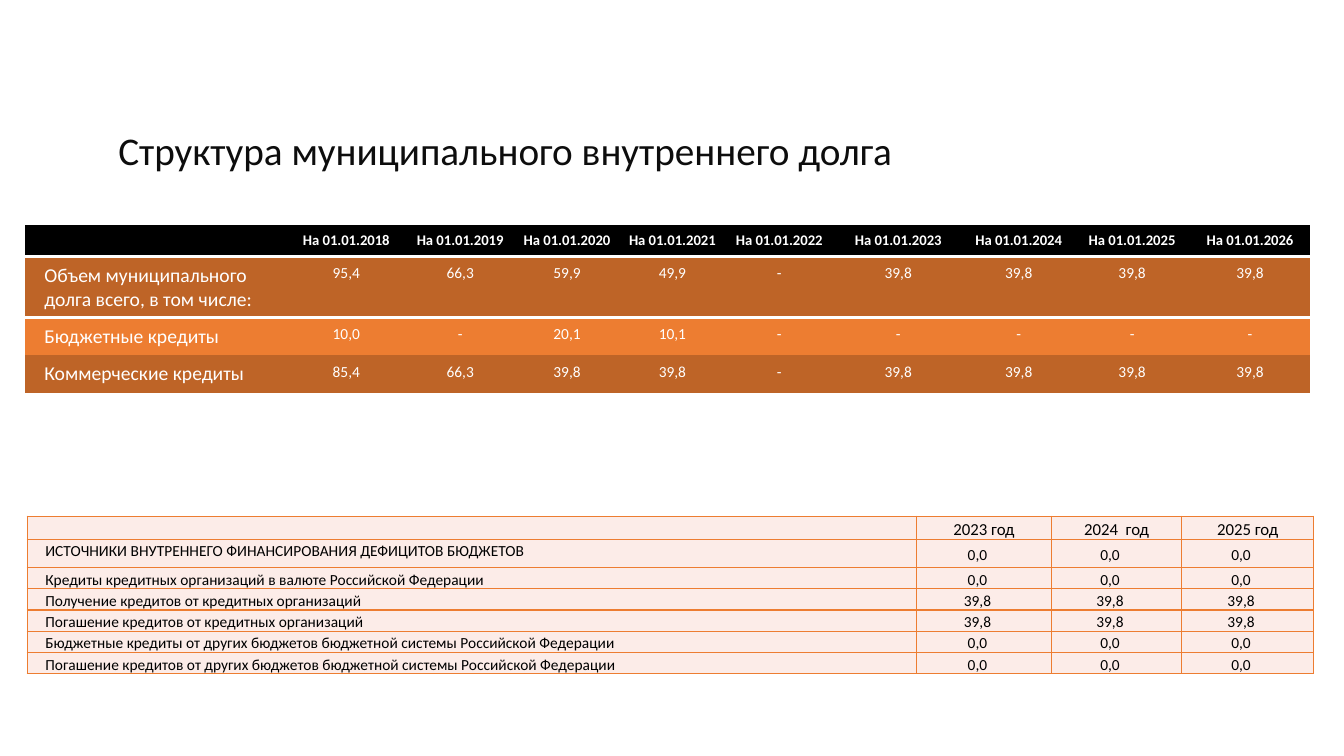
import pptx
import pptx.util
import pptx.dml.color
import pptx.enum.text
import pptx.oxml.ns
from lxml import etree

Inches, Pt = pptx.util.Inches, pptx.util.Pt
RGBColor = pptx.dml.color.RGBColor
ALIGN = pptx.enum.text.PP_ALIGN
ANCHOR = pptx.enum.text.MSO_ANCHOR
qn = pptx.oxml.ns.qn

# Content
TITLE = "Структура муниципального внутреннего долга"
DEBT = [
    [""] + [f"На 01.01.{year}" for year in range(2018, 2027)],
    ["Объем муниципального долга всего, в том числе:",
     "95,4", "66,3", "59,9", "49,9", "-", "39,8", "39,8", "39,8", "39,8"],
    ["Бюджетные кредиты",
     "10,0", "-", "20,1", "10,1", "-", "-", "-", "-", "-"],
    ["Коммерческие кредиты",
     "85,4", "66,3", "39,8", "39,8", "-", "39,8", "39,8", "39,8", "39,8"],
]
FUNDS = [
    ("", "2023 год", "2024  год", "2025 год"),
    ("ИСТОЧНИКИ ВНУТРЕННЕГО ФИНАНСИРОВАНИЯ ДЕФИЦИТОВ БЮДЖЕТОВ", "0,0", "0,0", "0,0"),
    ("Кредиты кредитных организаций в валюте Российской Федерации", "0,0", "0,0", "0,0"),
    ("Получение кредитов от кредитных организаций", "39,8", "39,8", "39,8"),
    ("Погашение кредитов от кредитных организаций", "39,8", "39,8", "39,8"),
    ("Бюджетные кредиты от других бюджетов бюджетной системы Российской Федерации",
     "0,0", "0,0", "0,0"),
    ("Погашение кредитов от других бюджетов бюджетной системы Российской Федерации",
     "0,0", "0,0", "0,0"),
]
DEBT_COLS = [2.6, 1.17, 1.09, 1.03, 1.06, 1.06, 1.3, 1.09, 1.16, 1.18]
DEBT_ROWS = [0.31, 0.6, 0.37, 0.37]
FUND_COLS = [8.82, 1.34, 1.29, 1.31]
FUND_ROWS = [0.23, 0.28] + [0.21] * 5

# Style
FONT = "Calibri"
PLAIN = "{2D5ABB26-0587-4C30-8999-92F81FD0307C}"
BLACK = RGBColor(0x00, 0x00, 0x00)
WHITE = RGBColor(0xFF, 0xFF, 0xFF)
INK = RGBColor(0x0D, 0x0D, 0x0D)
ORANGE = RGBColor(0xED, 0x7D, 0x31)
BROWN = RGBColor(0xBE, 0x64, 0x27)
PINK = RGBColor(0xFC, 0xEC, 0xE8)


def add_run(para, text, size, color, bold=False):
    run = para.add_run()
    run.text = text
    font = run.font
    font.name, font.size, font.bold = FONT, Pt(size), bold
    font.color.rgb = color


def add_grid(slide, left, top, cols, rows):
    frame = slide.shapes.add_table(
        len(rows), len(cols), Inches(left), Inches(top),
        Inches(sum(cols)), Inches(sum(rows)))
    table = frame.table
    table.first_row = table.horz_banding = False
    table._tbl.tblPr.find(qn("a:tableStyleId")).text = PLAIN
    for col, width in zip(table.columns, cols):
        col.width = Inches(width)
    for row, height in zip(table.rows, rows):
        row.height = Inches(height)
    return table


def set_edge(cell, sides, color, width):
    props = cell._tc.get_or_add_tcPr()
    for side in sides:
        line = etree.SubElement(props, qn(f"a:ln{side}"), w=str(Pt(width)))
        fill = etree.SubElement(line, qn("a:solidFill"))
        etree.SubElement(fill, qn("a:srgbClr"), val=str(color))


def fill_cell(cell, text, size, color, fill, pad, label, bold=False):
    cell.fill.solid()
    cell.fill.fore_color.rgb = fill
    cell.margin_left, cell.margin_top, cell.margin_right, cell.margin_bottom = map(Inches, pad)
    para = cell.text_frame.paragraphs[0]
    if label:
        para._p.get_or_add_pPr().set("marL", str(Inches(0.12)))
    else:
        para.alignment = ALIGN.CENTER
    if text:
        add_run(para, text, size, color, bold)
    else:
        etree.SubElement(para._p, qn("a:endParaRPr"), sz=str(size * 100))
    return para


deck = pptx.Presentation()
deck.slide_width, deck.slide_height = Inches(13.33), Inches(7.5)
slide = deck.slides.add_slide(deck.slide_layouts[6])

# Title
box = slide.shapes.add_textbox(Inches(0.13), Inches(1.2), Inches(9.76), Inches(0.45))
box.text_frame.word_wrap = True
para = box.text_frame.paragraphs[0]
para.alignment = ALIGN.CENTER
add_run(para, TITLE, 28, INK)

# Debt by date
table = add_grid(slide, 0.25, 2.23, DEBT_COLS, DEBT_ROWS)
for r, row in enumerate(DEBT):
    fill = BLACK if r == 0 else BROWN if r % 2 else ORANGE
    for c, text in enumerate(row):
        cell = table.cell(r, c)
        if r == 0:
            set_edge(cell, "B", WHITE, 2)
        elif r == 1:
            set_edge(cell, "T", WHITE, 2)
        size = 10.5 if r == 0 else 11 if c else 14
        if not text:
            size = 10
        fill_cell(cell, text, size, WHITE, fill, [0.07] * 4, c == 0, r == 0)

# Sources of deficit funding
table = add_grid(slide, 0.27, 5.12, FUND_COLS, FUND_ROWS)
for r, row in enumerate(FUNDS):
    for c, text in enumerate(row):
        cell = table.cell(r, c)
        set_edge(cell, "LRTB", ORANGE, 1)
        pad = (0.06, 0, 0.19 if r and c else 0.06, 0)
        para = fill_cell(cell, text, 11 if r else 12, BLACK, PINK, pad, c == 0)
        para.line_spacing = 1.15
        if c:
            cell.vertical_anchor = ANCHOR.MIDDLE

deck.save("out.pptx")
